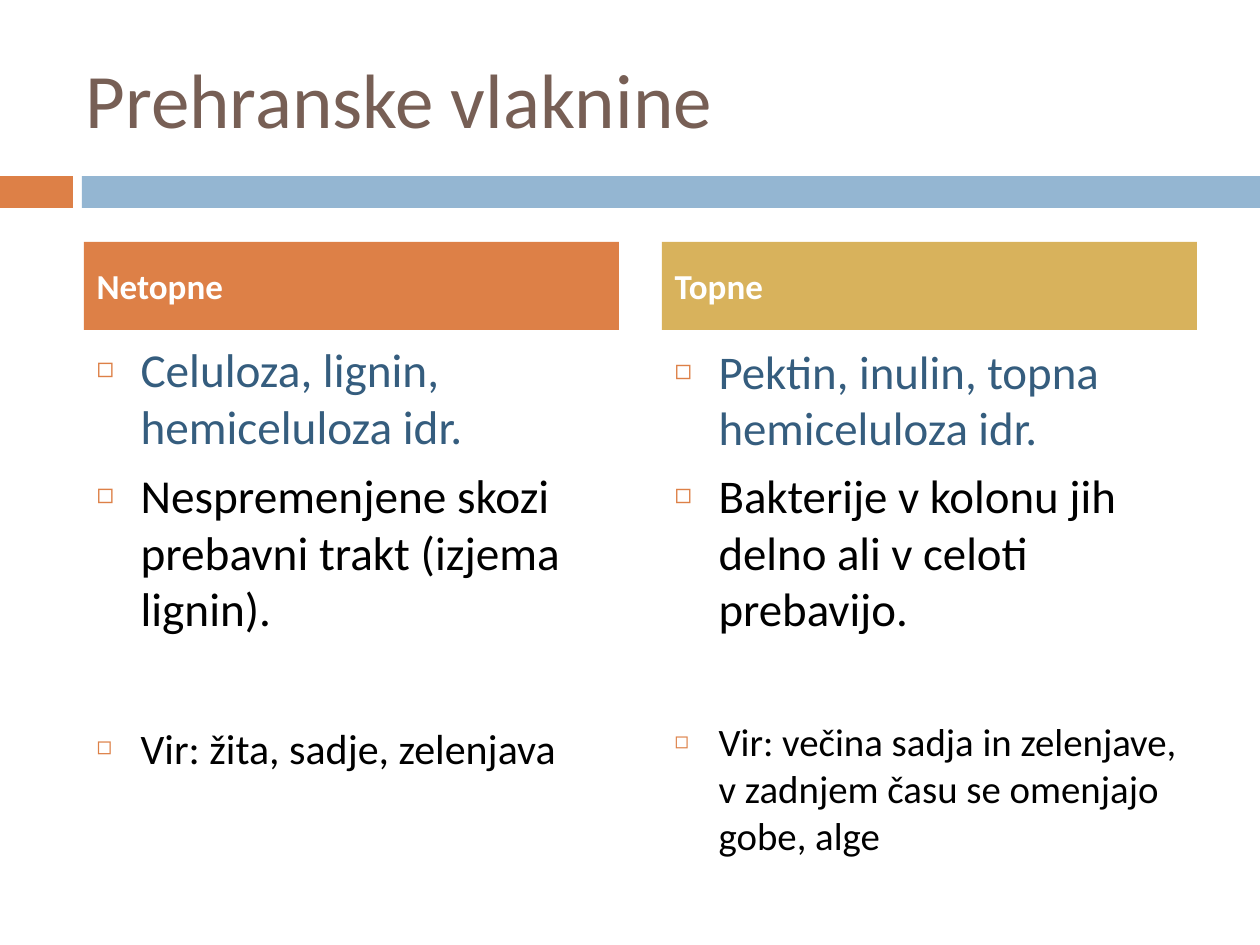
from dataclasses import dataclass

from lxml import etree
from pptx import Presentation
from pptx.dml.color import RGBColor
from pptx.enum.shapes import MSO_SHAPE
from pptx.enum.text import MSO_ANCHOR, MSO_AUTO_SIZE, PP_ALIGN
from pptx.oxml.ns import qn
from pptx.util import Pt

RECTANGLE = MSO_SHAPE.RECTANGLE
MIDDLE, TOP = MSO_ANCHOR.MIDDLE, MSO_ANCHOR.TOP
LEFT = PP_ALIGN.LEFT
NO_AUTOFIT = MSO_AUTO_SIZE.NONE
EMU_PER_PX = 914400 / 126
COMPARISON_LAYOUT = 3 + 1


@dataclass(frozen=True)
class Theme:
    font: str = "Calibri"
    brown: str = "775F55"
    orange: str = "DD8047"
    light_blue: str = "94B6D2"
    gold: str = "D8B25C"
    dark_blue: str = "355D7E"
    black: str = "000000"
    white: str = "FFFFFF"
    title_size: float = 44
    header_size: float = 20
    space_before: float = 7
    bullet_percent: int = 60


THEME = Theme()


@dataclass(frozen=True)
class Column:
    header: str
    fill: str
    items: tuple
    text_size: float
    source_size: float
    source_gap: float
    list_top: int


COLUMNS = (
    Column("Netopne", THEME.orange,
           ("Celuloza, lignin, hemiceluloza idr.",
            "Nespremenjene skozi prebavni trakt (izjema lignin).",
            "Vir: žita, sadje, zelenjava"),
           text_size=27, source_size=24, source_gap=49, list_top=92),
    Column("Topne", THEME.gold,
           ("Pektin, inulin, topna hemiceluloza idr.",
            "Bakterije v kolonu jih delno ali v celoti prebavijo.",
            "Vir: večina sadja in zelenjave, v zadnjem času se omenjajo gobe, alge"),
           text_size=26.8, source_size=22.2, source_gap=47, list_top=94),
)


def px(length):
    return round(length * EMU_PER_PX)


def rgb(color):
    return RGBColor.from_string(color)


def place(shape, left, top, width, height):
    shape.left, shape.top = px(left), px(top)
    shape.width, shape.height = px(width), px(height)


def fill_solid(shape, color):
    shape.fill.solid()
    shape.fill.fore_color.rgb = rgb(color)


def prepare_frame(shape, anchor):
    frame = shape.text_frame
    frame.auto_size = NO_AUTOFIT
    frame.word_wrap = True
    frame.vertical_anchor = anchor
    return frame


def format_paragraph(paragraph, size, color, bold=False, space_before=0):
    paragraph.alignment = LEFT
    paragraph.space_before = Pt(space_before)
    font = paragraph.font
    font.name, font.size, font.bold = THEME.font, Pt(size), bold
    font.color.rgb = rgb(color)


def add_bullet(paragraph):
    """Give the paragraph a small square bullet and a hanging indent."""
    properties = paragraph._p.get_or_add_pPr()
    properties.set("marL", str(px(44)))
    properties.set("indent", str(-px(44)))
    bullet_color = etree.Element(qn("a:buClr"))
    etree.SubElement(bullet_color, qn("a:srgbClr"), val=THEME.orange)
    bullet_size = etree.Element(qn("a:buSzPct"), val=str(THEME.bullet_percent * 1000))
    bullet_character = etree.Element(qn("a:buChar"), char="◻")
    following = properties.find(qn("a:defRPr"))
    for element in (bullet_color, bullet_size, bullet_character):
        if following is None:
            properties.append(element)
        else:
            following.addprevious(element)


def add_title(placeholder, text, left, top, width, height):
    place(placeholder, left, top, width, height)
    frame = prepare_frame(placeholder, MIDDLE)
    frame.text = text
    format_paragraph(frame.paragraphs[0], THEME.title_size, THEME.brown)


def add_divider(slide, left, top, width, height):
    """Draw a short orange block and a long blue bar on one band."""
    block_width, bar_offset = 73, 82
    for offset, part_width, color in (
        (0, block_width, THEME.orange),
        (bar_offset, width - bar_offset, THEME.light_blue),
    ):
        bar = slide.shapes.add_shape(RECTANGLE, 0, 0, 0, 0)
        place(bar, left + offset, top, part_width, height)
        bar.shadow.inherit = False
        fill_solid(bar, color)
        bar.line.fill.background()


def add_column(header, body, column, left, top, width):
    place(header, left, top, width, 88)
    fill_solid(header, column.fill)
    frame = prepare_frame(header, MIDDLE)
    frame.text = column.header
    format_paragraph(frame.paragraphs[0], THEME.header_size, THEME.white, True,
                     THEME.space_before)

    place(body, left, top + column.list_top, width, 494)
    frame = prepare_frame(body, TOP)
    frame.text = "\n".join(column.items)
    styles = (
        (column.text_size, THEME.dark_blue, THEME.space_before),
        (column.text_size, THEME.black, THEME.space_before),
        (column.source_size, THEME.black, column.source_gap),
    )
    for paragraph, (size, color, gap) in zip(frame.paragraphs, styles):
        format_paragraph(paragraph, size, color, space_before=gap)
        add_bullet(paragraph)


def main():
    presentation = Presentation()
    presentation.slide_width, presentation.slide_height = px(1260), px(945)
    slide = presentation.slides.add_slide(presentation.slide_layouts[COMPARISON_LAYOUT])
    title, *column_parts = slide.placeholders
    add_divider(slide, 0, 176, 1260, 32)
    add_title(title, "Prehranske vlaknine", 73, 38, 1124, 120)
    for index, column in enumerate(COLUMNS):
        header, body = column_parts[2 * index:2 * index + 2]
        add_column(header, body, column, 84 + 578 * index, 242, 535)
    presentation.save("out.pptx")


if __name__ == "__main__":
    main()
